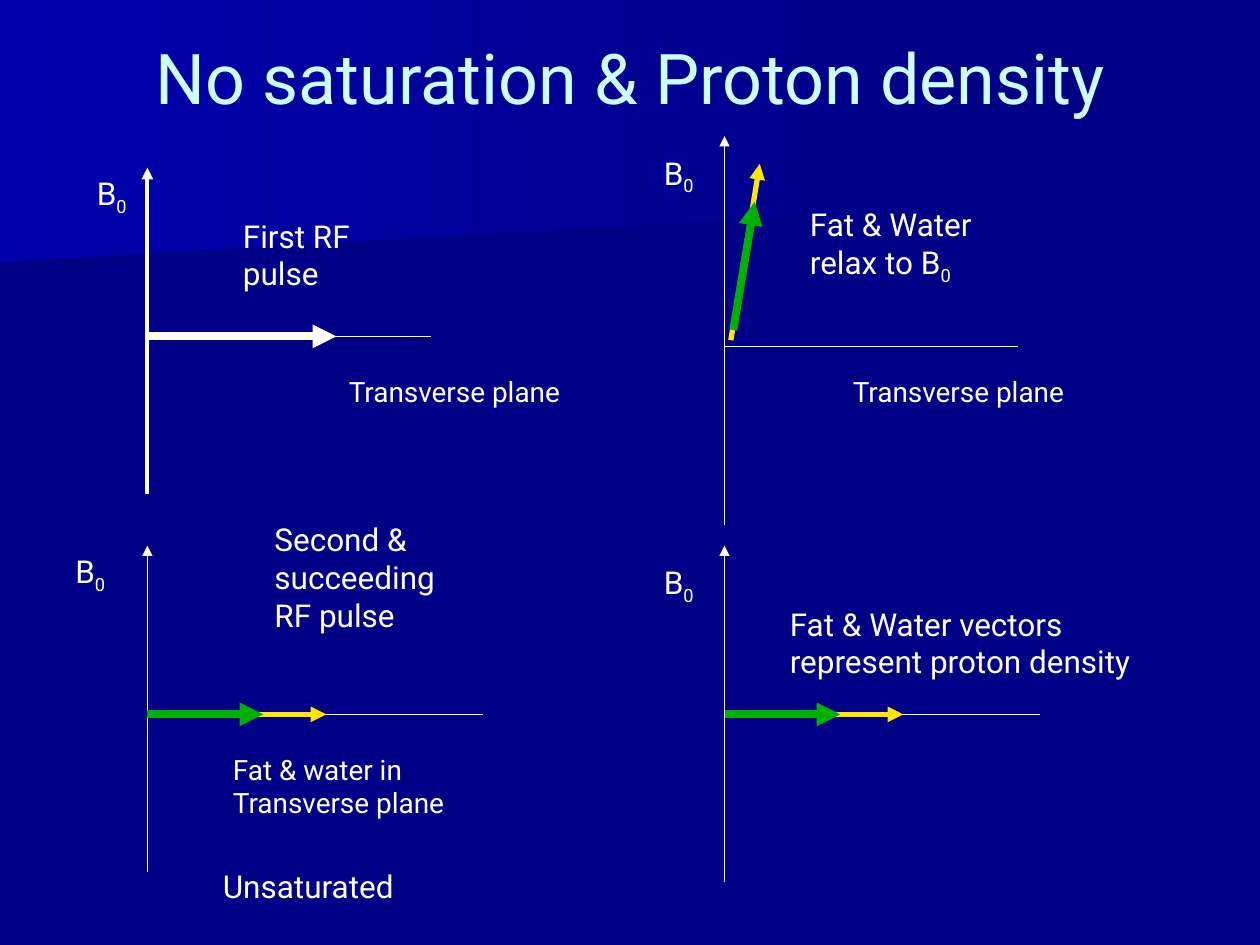
from dataclasses import dataclass

from lxml.etree import SubElement
from pptx import Presentation
from pptx.dml.color import RGBColor
from pptx.enum.shapes import MSO_CONNECTOR
from pptx.enum.text import MSO_ANCHOR, PP_ALIGN
from pptx.oxml.ns import qn
from pptx.util import Inches, Pt


@dataclass(frozen=True)
class Theme:
    font: str = "Roboto"
    background: str = "000086"
    lower_band: str = "000083"
    upper_band: str = "0000AC"
    title: str = "CCFFFF"
    white: str = "FFFFFF"
    yellow: str = "FFE701"
    green: str = "00B000"
    title_size: int = 40
    label_size: int = 18
    small_size: int = 16
    thin: float = 0.75
    axis: float = 2.25
    medium: float = 3
    thick: float = 4.5


theme = Theme()


def add_line(start, end, color, width, arrow=False):
    line = slide.shapes.add_connector(
        MSO_CONNECTOR.STRAIGHT, *map(Inches, (*start, *end)))
    line.line.color.rgb = RGBColor.from_string(color)
    line.line.width = Pt(width)
    properties = line._element.spPr
    if arrow:
        SubElement(properties.find(qn("a:ln")), qn("a:tailEnd"), type="triangle")
    SubElement(properties, qn("a:effectLst"))


def add_label(text, left, top, width, height, size, color=theme.white, subscript=""):
    frame = slide.shapes.add_textbox(
        *map(Inches, (left, top, width, height))).text_frame
    frame.word_wrap = True
    paragraph = frame.paragraphs[0]
    paragraph.font.name = theme.font
    paragraph.font.size = Pt(size)
    paragraph.font.color.rgb = RGBColor.from_string(color)
    paragraph.add_run().text = text
    if subscript:
        run = paragraph.add_run()
        run.text = subscript
        run._r.get_or_add_rPr().set("baseline", "-25000")
    return frame


presentation = Presentation()
presentation.slide_width = Inches(10)
presentation.slide_height = Inches(7.5)
slide = presentation.slides.add_slide(presentation.slide_layouts[6])
slide.background.fill.solid()
slide.background.fill.fore_color.rgb = RGBColor.from_string(theme.background)

# Background bands, each fading to the background colour on the right
bands = [
    (theme.lower_band,
     [(7.78, 1.53), (0, 2.17), (0, 1.01), (7.79, 1.01), (7.78, 1.28)]),
    (theme.upper_band, [(7.92, 1.62), (0, 2.08), (0, 0), (7.92, 0)]),
]
for left_color, corners in bands:
    first, *others = [(Inches(x), Inches(y)) for x, y in corners]
    outline = slide.shapes.build_freeform(*first)
    outline.add_line_segments(others, close=True)
    band = outline.convert_to_shape()
    band.shadow.inherit = False
    band.line.fill.background()
    band.fill.gradient()
    band.fill.gradient_angle = 0
    for stop, color in zip(band.fill.gradient_stops, (left_color, theme.background)):
        stop.color.rgb = RGBColor.from_string(color)

title = add_label("No saturation & Proton density", 0.5, 0.3, 9, 0.62,
                  theme.title_size, theme.title)
title.vertical_anchor = MSO_ANCHOR.MIDDLE
title.paragraphs[0].alignment = PP_ALIGN.CENTER

# Axes: x of B0, its bottom and top, y and right end of the transverse axis, B0 width
left_x, right_x = 1.17, 5.75
axes = [
    (left_x, 3.92, 1.33, 2.67, 3.42, theme.axis),
    (right_x, 4.17, 1.08, 2.75, 8.08, theme.thin),
    (left_x, 6.92, 4.33, 5.67, 3.83, theme.thin),
    (right_x, 7, 4.33, 5.67, 8.25, theme.thin),
]
for x, bottom, top, plane_y, plane_end, width in axes:
    add_line((x, bottom), (x, top), theme.white, width, arrow=True)
    add_line((x, plane_y), (plane_end, plane_y), theme.white, theme.thin)

# Magnetisation vectors
add_line((left_x, 2.67), (2.67, 2.67), theme.white, theme.thick, arrow=True)
add_line((5.8, 2.7), (6.03, 1.3), theme.yellow, theme.medium, arrow=True)
add_line((5.82, 2.62), (5.99, 1.6), theme.green, theme.thick, arrow=True)
for x in (left_x, right_x):
    add_line((x, 5.67), (x + 1.42, 5.67), theme.yellow, theme.medium, arrow=True)
    add_line((x, 5.67), (x + 0.92, 5.67), theme.green, theme.thick, arrow=True)

for left, top in [(0.67, 1.33), (5.17, 1.17), (0.5, 4.33), (5.17, 4.42)]:
    add_label("B", left, top, 0.5, 0.4, theme.label_size, subscript="0")

add_label("Fat & Water relax to B", 6.33, 1.58, 1.67, 0.7, theme.label_size,
          subscript="0")
captions = [
    ("First RF pulse", 1.83, 1.67, 1.25, 0.7, theme.label_size),
    ("Second & succeeding RF pulse", 2.08, 4.08, 1.75, 1, theme.label_size),
    ("Transverse plane", 2.67, 2.92, 1.92, 0.37, theme.small_size),
    ("Transverse plane", 6.67, 2.92, 1.92, 0.37, theme.small_size),
    ("Fat & water in Transverse plane", 1.75, 5.92, 1.92, 0.64, theme.small_size),
    ("Fat & Water vectors represent proton density", 6.17, 4.75, 3.08, 0.7,
     theme.label_size),
    ("Unsaturated", 1.67, 6.83, 2.25, 0.4, theme.label_size),
]
for caption in captions:
    add_label(*caption)

presentation.save("out.pptx")
